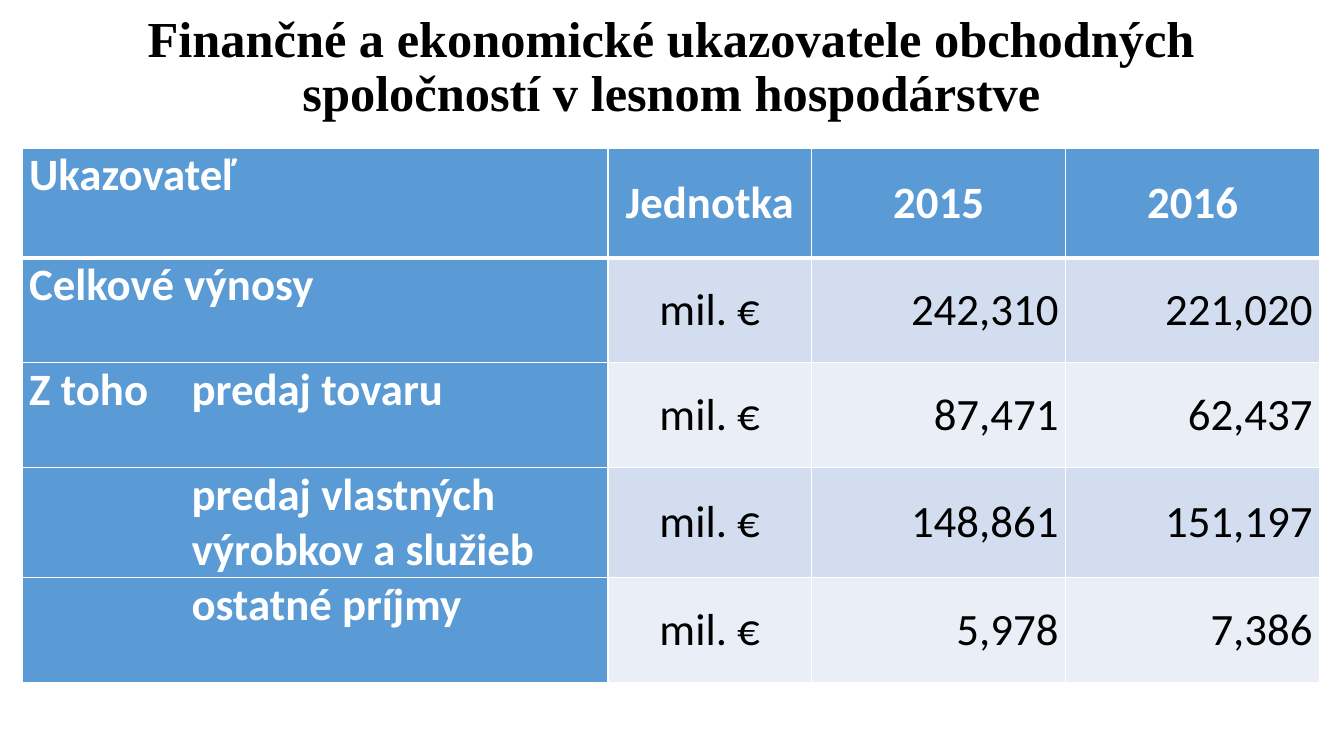
from lxml import etree
from pptx import Presentation
from pptx.dml.color import RGBColor
from pptx.enum.text import MSO_ANCHOR, MSO_AUTO_SIZE, PP_ALIGN
from pptx.oxml.ns import qn
from pptx.util import Inches, Pt

LEFT, CENTER, RIGHT = PP_ALIGN.LEFT, PP_ALIGN.CENTER, PP_ALIGN.RIGHT
TOP, MIDDLE = MSO_ANCHOR.TOP, MSO_ANCHOR.MIDDLE
NO_AUTOFIT = MSO_AUTO_SIZE.NONE

# Content
TITLE = "Finančné a ekonomické ukazovatele obchodných spoločností v lesnom hospodárstve"
ROWS = [
    ("Ukazovateľ", "Jednotka", "2015", "2016"),
    ("Celkové výnosy", "mil. €", "242,310", "221,020"),
    ("Z toho\tpredaj tovaru", "mil. €", "87,471", "62,437"),
    ("predaj vlastných\nvýrobkov a služieb", "mil. €", "148,861", "151,197"),
    ("ostatné príjmy", "mil. €", "5,978", "7,386"),
]
INDENTED_ROWS = (3, 4)

# Layout and colours
COL_WIDTHS = (5.81, 2.02, 2.52, 2.52)
ROW_HEIGHTS = (1.09, 1.04, 1.04, 1.09, 1.04)
ALIGNS = (LEFT, CENTER, RIGHT, RIGHT)
INDENT = Inches(1.61)
COLORS = {"head": "5B9BD5", "odd": "D2DEEF", "even": "EAEFF7",
          "white": "FFFFFF", "black": "000000"}


def color(name):
    return RGBColor.from_string(COLORS[name])


def set_font(p, name, size, color_name, bold):
    p.font.name = name
    p.font.size = Pt(size)
    p.font.bold = bold
    p.font.color.rgb = color(color_name)


def add_borders(cell, bottom):
    tc_pr = cell._tc.get_or_add_tcPr()
    for side, width in (("lnL", 1), ("lnR", 1), ("lnT", 1), ("lnB", bottom)):
        ln = etree.SubElement(tc_pr, qn("a:" + side), w=str(Pt(width)))
        fill = etree.SubElement(ln, qn("a:solidFill"))
        etree.SubElement(fill, qn("a:srgbClr"), val=COLORS["white"])


def add_tab_stop(p):
    tabs = etree.Element(qn("a:tabLst"))
    etree.SubElement(tabs, qn("a:tab"), pos=str(INDENT), algn="l")
    p._p.get_or_add_pPr().insert(0, tabs)


def fill_cell(cell, text, row, col):
    is_head = row == 0 or col == 0
    cell.margin_left = cell.margin_right = Inches(0.07)
    cell.margin_top = cell.margin_bottom = 0
    cell.vertical_anchor = TOP if col == 0 else MIDDLE
    # The header row has a thick lower edge, shared with the row below
    add_borders(cell, 3 if row == 0 else 1)
    if row == 1:
        cell._tc.tcPr.find(qn("a:lnT")).set("w", str(Pt(3)))
    cell.fill.solid()
    cell.fill.fore_color.rgb = color("head" if is_head else "odd" if row % 2 else "even")
    cell.text = text
    for p in cell.text_frame.paragraphs:
        p.alignment = CENTER if row == 0 and col > 0 else ALIGNS[col]
        set_font(p, "Calibri", 32, "white" if is_head else "black", is_head)
        if "\t" in text:
            add_tab_stop(p)
        if col == 0 and row in INDENTED_ROWS:
            p._p.get_or_add_pPr().set("marL", str(INDENT))


def main():
    prs = Presentation()
    prs.slide_width, prs.slide_height = Inches(13.33), Inches(7.5)
    s = prs.slides.add_slide(prs.slide_layouts[5])

    # Title
    title = s.shapes.title
    title.left, title.top = Inches(0.91), Inches(0.17)
    title.width, title.height = Inches(11.5), Inches(1.01)
    tf = title.text_frame
    tf.text = TITLE
    tf.auto_size = NO_AUTOFIT
    tf.vertical_anchor = MIDDLE
    p = tf.paragraphs[0]
    p.alignment = CENTER
    p.line_spacing = 0.9
    set_font(p, "Times New Roman", 36, "black", True)

    # Table
    table = s.shapes.add_table(
        len(ROWS), len(COL_WIDTHS), Inches(0.22), Inches(1.47),
        Inches(sum(COL_WIDTHS)), Inches(sum(ROW_HEIGHTS))).table
    table.first_col = True
    for column, width in zip(table.columns, COL_WIDTHS):
        column.width = Inches(width)
    for table_row, height in zip(table.rows, ROW_HEIGHTS):
        table_row.height = Inches(height)
    for row, values in enumerate(ROWS):
        for col, text in enumerate(values):
            fill_cell(table.cell(row, col), text, row, col)

    prs.save("out.pptx")


if __name__ == "__main__":
    main()
